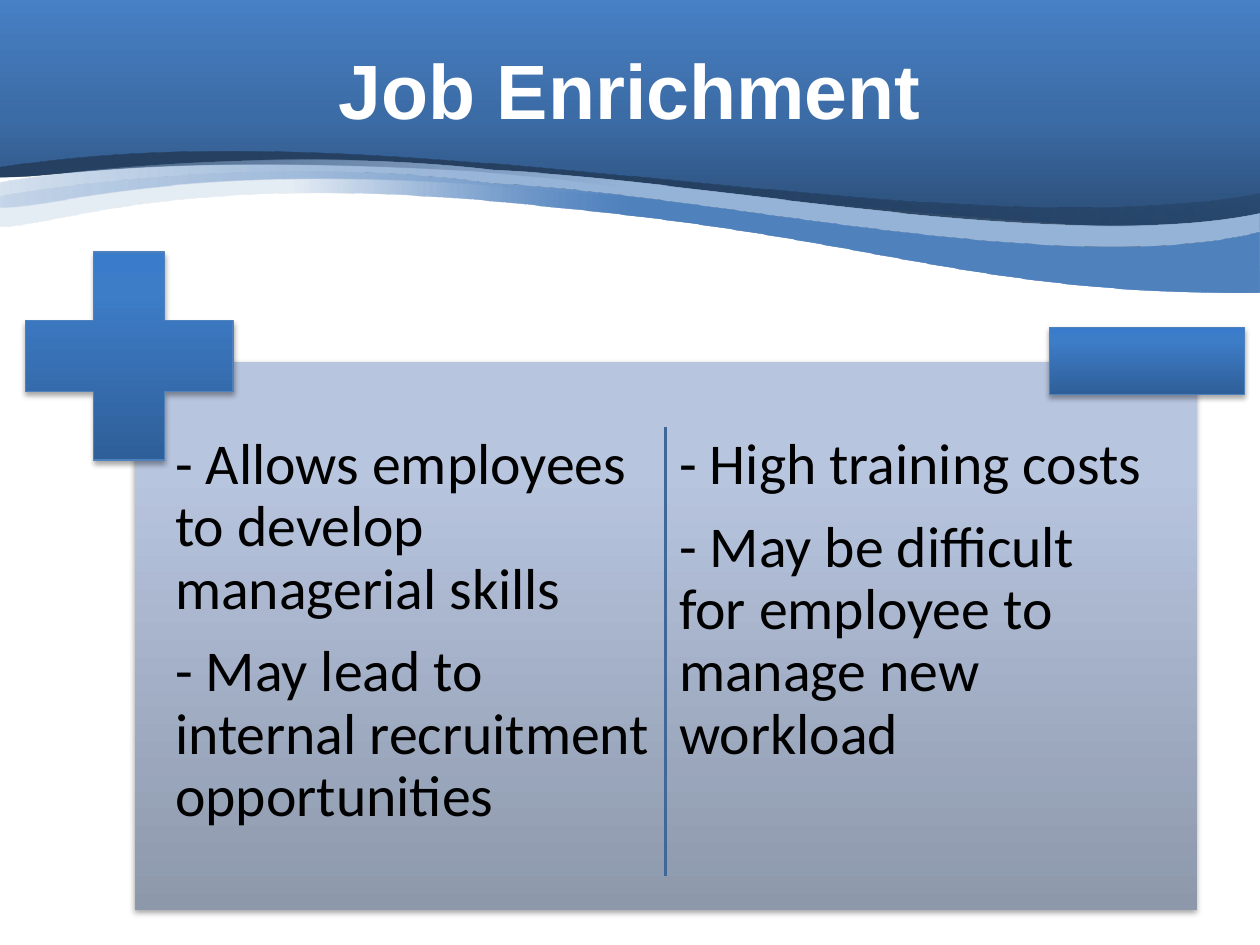
import pptx
import pptx.dml.color
import pptx.enum.shapes
import pptx.enum.text
import pptx.oxml.ns
import pptx.util
from lxml import etree

Inches, Pt = pptx.util.Inches, pptx.util.Pt
qn = pptx.oxml.ns.qn
RGB = pptx.dml.color.RGBColor.from_string
PRESET = pptx.enum.shapes.MSO_SHAPE

TITLE = "Job Enrichment"
COLUMNS = [
    ["- Allows employees to develop managerial skills",
     "- May lead to internal recruitment opportunities"],
    ["- High training costs",
     "- May be difficult for employee to manage new workload"],
]

# Gradient stops are (position %, colour, opacity %).
THEME = {
    "title": {"font": "Arial", "size": 44, "color": "FFFFFF", "bold": True},
    "body": {"font": "Calibri", "size": 33, "color": "000000", "bold": False},
    "banner": [(0, "2A4C75", 100), (50, "3C6CA6", 100), (100, "4780C5", 100)],
    "dark_wave": [(0, "254061", 50), (50, "254061", 100), (100, "254061", 100)],
    "pale_wave": [(0, "95B3D7", 100), (50, "95B3D7", 100), (100, "95B3D7", 21)],
    "blue_wave": [(0, "4F81BD", 100), (50, "4F81BD", 100), (77, "95B3D7", 12)],
    "panel": [(0, "8D98AB", 100), (80, "B8C5DF", 100), (100, "B8C6E0", 100)],
    "sign": [(0, "2F5F99", 100), (80, "3D7CC7", 100), (100, "3A7CCB", 100)],
    "sign_line": "4F81BD",
    "divider": "3F6797",
}
UPWARD, LEFTWARD = 270, 180

# Each wave: gradient, direction, start, then lines (x, y) and cubic curves (six numbers).
WAVES = [
    ("banner", UPWARD, (-0.01, -0.01),
     [(10, -0.01), (10, 1.83), (6.66, 1.83, 2.88, 0.92, -0.01, 1.33)]),
    ("dark_wave", LEFTWARD, (10.03, 1.53),
     [(10.03, 1.83), (7.79, 2.13, 6.28, 1.57, 3.76, 1.36),
      (1.21, 1.22, 0.47, 1.41, 0, 1.41), (0, 1.33),
      (3.19, 0.83, 7.47, 2.01, 10.03, 1.53)]),
    ("pale_wave", LEFTWARD, (10, 1.69),
     [(10, 2.11), (7.74, 2.13, 6.93, 1.72, 4.42, 1.52),
      (1.51, 1.23, 0.47, 1.66, 0, 1.65), (0, 1.64, -0.01, 1.58, 0, 1.45),
      (0.46, 1.36, 2.31, 1.15, 3.92, 1.35), (5.58, 1.42, 8.44, 2.03, 10, 1.69)]),
    ("blue_wave", LEFTWARD, (10, 1.84),
     [(10, 2.32), (7.74, 2.34, 6.93, 1.88, 4.42, 1.65),
      (1.51, 1.32, 0.47, 1.8, 0, 1.8), (0, 1.78, -0.01, 1.72, 0, 1.56),
      (0.46, 1.47, 2.31, 1.23, 3.92, 1.46), (5.58, 1.53, 8.44, 2.23, 10, 1.84)]),
]
WAVE_LAYERS = 2  # stacked twice, which deepens the translucent ends

PANEL = (1.07, 2.87, 8.43, 4.35)
PLUS_SIGN = (0.2, 2, 1.65, 1.65)
MINUS_SIGN = (8.33, 2.6, 1.55, 0.53)
COLUMN_LEFT, COLUMN_TOP, COLUMN_PITCH = 1.32, 3.38, 4
COLUMN_SIZE = (3.91, 3.73)
DIVIDER_X, DIVIDER_TOP, DIVIDER_BOTTOM = 5.28, 3.39, 6.95


def add_color(parent, color, opacity):
    node = etree.SubElement(parent, qn("a:srgbClr"), val=color)
    if opacity < 100:
        etree.SubElement(node, qn("a:alpha"), val=str(opacity * 1000))


def fill_gradient(shape, stops, angle):
    """Put a linear gradient right after the geometry; angle runs clockwise."""
    gradient = etree.Element(qn("a:gradFill"), rotWithShape="1")
    stop_list = etree.SubElement(gradient, qn("a:gsLst"))
    for position, color, opacity in stops:
        stop = etree.SubElement(stop_list, qn("a:gs"), pos=str(position * 1000))
        add_color(stop, color, opacity)
    etree.SubElement(gradient, qn("a:lin"), ang=str(angle * 60000), scaled="0")
    shape._element.spPr.insert(2, gradient)


def add_drop_shadow(shape):
    effects = shape._element.spPr.find(qn("a:effectLst"))
    shadow = etree.SubElement(
        effects, qn("a:outerShdw"), blurRad=str(Pt(3.1)), dist=str(Pt(1.8)),
        dir=str(90 * 60000), rotWithShape="0")
    add_color(shadow, "000000", 35)


def bend_segments(shape, segments):
    """Turn the straight sides that have control points into cubic curves."""
    sides = list(shape._element.spPr.iter(qn("a:lnTo")))
    for side, segment in zip(sides, segments):
        if len(segment) == 2:
            continue
        curve = etree.Element(qn("a:cubicBezTo"))
        for x, y in (segment[:2], segment[2:4]):
            etree.SubElement(curve, qn("a:pt"), x=str(Inches(x) - shape.left),
                             y=str(Inches(y) - shape.top))
        curve.append(side[0])
        side.getparent().replace(side, curve)


def add_wave(slide, gradient, angle, start, segments):
    builder = slide.shapes.build_freeform(*map(Inches, start))
    builder.add_line_segments(
        [tuple(map(Inches, segment[-2:])) for segment in segments], close=True)
    wave = builder.convert_to_shape()
    bend_segments(wave, segments)
    wave.shadow.inherit = False
    wave.line.fill.background()
    fill_gradient(wave, THEME[gradient], angle)


def add_block(slide, preset, box, gradient, line_color=None):
    block = slide.shapes.add_shape(preset, *map(Inches, box))
    block.shadow.inherit = False
    add_drop_shadow(block)
    fill_gradient(block, THEME[gradient], UPWARD)
    if line_color:
        block.line.color.rgb = RGB(line_color)
        block.line.width = Pt(0.75)
    else:
        block.line.fill.background()
    return block


def add_text(slide, box, texts, style):
    frame = slide.shapes.add_textbox(*map(Inches, box)).text_frame
    frame.word_wrap = True
    for index, text in enumerate(texts):
        paragraph = frame.paragraphs[0] if index == 0 else frame.add_paragraph()
        run = paragraph.add_run()
        run.text = text
        run.font.name = style["font"]
        run.font.size = Pt(style["size"])
        run.font.bold = style["bold"]
        run.font.color.rgb = RGB(style["color"])
    return frame


def add_column(slide, left, points):
    frame = add_text(slide, (left, COLUMN_TOP, *COLUMN_SIZE), points, THEME["body"])
    frame.margin_left = frame.margin_right = Inches(0.07)
    frame.margin_top = frame.margin_bottom = Inches(0.07)
    for paragraph in frame.paragraphs:
        paragraph.line_spacing = 0.9
        paragraph.space_after = Pt(0.35 * THEME["body"]["size"])


def add_divider(slide):
    divider = slide.shapes.add_connector(
        pptx.enum.shapes.MSO_CONNECTOR.STRAIGHT, Inches(DIVIDER_X), Inches(DIVIDER_TOP),
        Inches(DIVIDER_X), Inches(DIVIDER_BOTTOM))
    divider.line.color.rgb = RGB(THEME["divider"])
    divider.line.width = Pt(2)
    etree.SubElement(divider._element.spPr, qn("a:effectLst"))


def main():
    deck = pptx.Presentation()
    deck.slide_width, deck.slide_height = Inches(10), Inches(7.5)
    slide = deck.slides.add_slide(deck.slide_layouts[6])

    for wave in WAVES * WAVE_LAYERS:
        add_wave(slide, *wave)

    title = add_text(slide, (0.5, 0.08, 9, 1.25), [TITLE], THEME["title"])
    title.vertical_anchor = pptx.enum.text.MSO_ANCHOR.MIDDLE
    title.paragraphs[0].alignment = pptx.enum.text.PP_ALIGN.CENTER

    add_block(slide, PRESET.RECTANGLE, PANEL, "panel")
    for index, points in enumerate(COLUMNS):
        add_column(slide, COLUMN_LEFT + index * COLUMN_PITCH, points)
    plus = add_block(slide, PRESET.CROSS, PLUS_SIGN, "sign", THEME["sign_line"])
    plus.adjustments[0] = 0.33
    add_block(slide, PRESET.RECTANGLE, MINUS_SIGN, "sign", THEME["sign_line"])
    add_divider(slide)

    deck.save("out.pptx")


if __name__ == "__main__":
    main()
